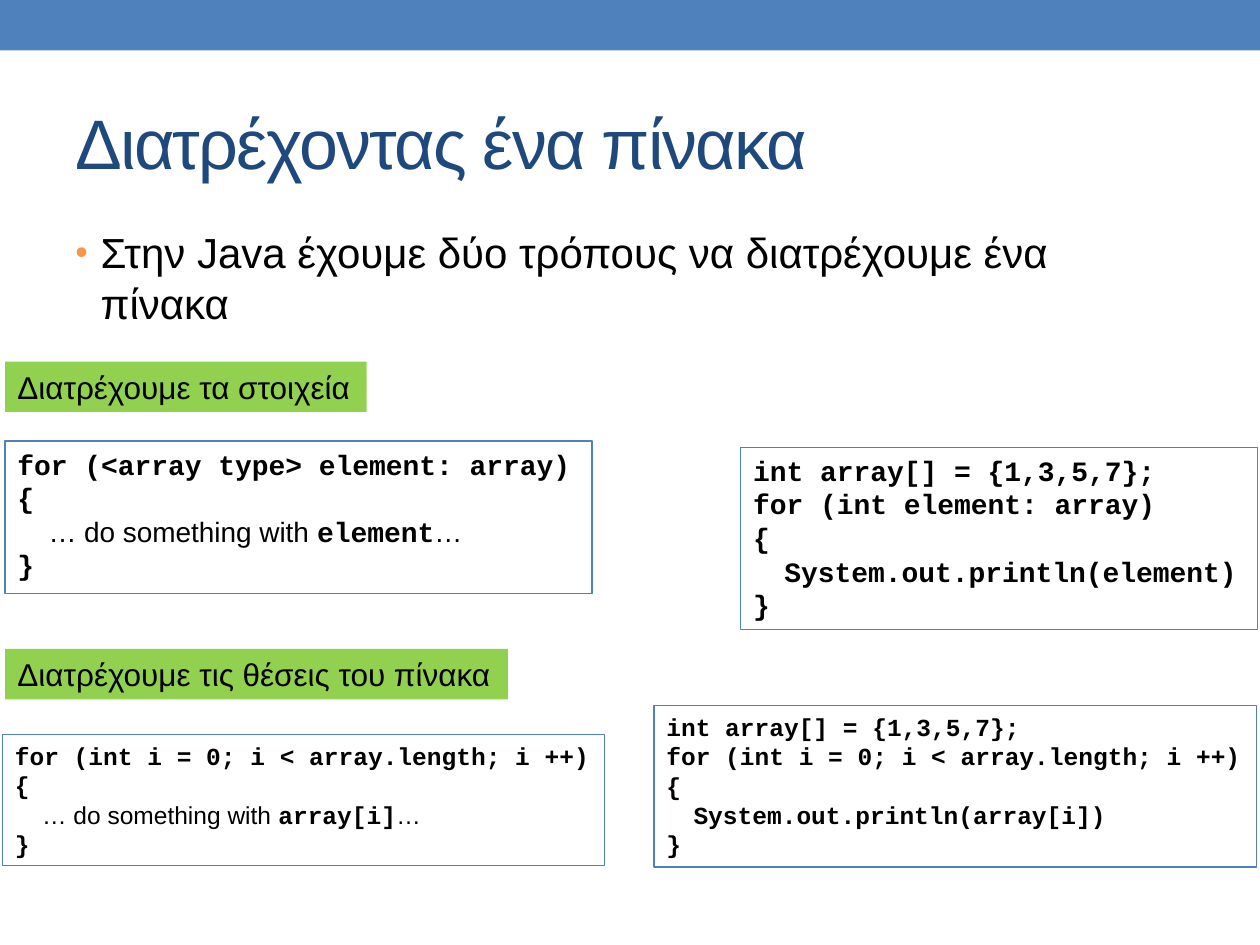
from dataclasses import dataclass

from lxml import etree
from pptx import Presentation
from pptx import util as u
from pptx.dml.color import RGBColor
from pptx.enum import shapes, text
from pptx.oxml.ns import qn
from pptx.shapes.autoshape import Shape
from pptx.slide import Slide

WIDTH, HEIGHT = u.Inches(10), u.Inches(7.5)
BLUE = RGBColor(0x4F, 0x81, 0xBD)
NAVY = RGBColor(0x1F, 0x49, 0x7D)
GREEN = RGBColor(0x92, 0xD0, 0x50)
BLACK = RGBColor(0, 0, 0)
BULLET_COLOR = "F79646"
PROSE, CODE = "Arial", "Courier New"
LABEL_HEIGHT = 5.33


@dataclass(frozen=True)
class Area:
    """A rectangle in percent of the slide's width and height."""
    left: float
    top: float
    width: float
    height: float

    def lengths(self) -> tuple[int, int, int, int]:
        shares = (self.left, self.top, self.width, self.height)
        return tuple(round(share * side / 100)
                     for share, side in zip(shares, (WIDTH, HEIGHT) * 2))


@dataclass(frozen=True)
class Line:
    """A line of code, which may stand inside prose."""
    code: str
    before: str = ""
    after: str = ""
    indented: bool = False


@dataclass(frozen=True)
class Listing:
    area: Area
    size: int
    head: tuple[str, ...]
    body: Line

    def lines(self) -> list[Line]:
        return [*map(Line, self.head), Line("{"), self.body, Line("}")]


@dataclass(frozen=True)
class Label:
    area: Area
    words: str


def do_something(target: str) -> Line:
    return Line(target, "… do something with ", "…", True)


def print_out(target: str) -> Line:
    return Line(f"System.out.println({target})", indented=True)


ARRAY = "int array[] = {1,3,5,7};"
INDEX_LOOP = "for (int i = 0; i < array.length; i ++)"
LISTINGS = (
    Listing(Area(0.4, 46.67, 46.6, 16.13), 16,
            ("for (<array type> element: array)",), do_something("element")),
    Listing(Area(0.2, 77.73, 47.8, 13.87), 14,
            (INDEX_LOOP,), do_something("array[i]")),
    Listing(Area(58.8, 47.33, 41, 19.33), 16,
            (ARRAY, "for (int element: array)"), print_out("element")),
    Listing(Area(51.9, 74.67, 47.8, 17.07), 14,
            (ARRAY, INDEX_LOOP), print_out("array[i]")),
)
LABELS = (
    Label(Area(0.4, 38.27, 28.7, LABEL_HEIGHT), "Διατρέχουμε τα στοιχεία"),
    Label(Area(0.4, 68.67, 39.9, LABEL_HEIGHT), "Διατρέχουμε τις θέσεις του πίνακα"),
)


def style(font: text.Font if hasattr(text, "Font") else object, name: str,
          size: float, color: RGBColor = BLACK, bold: bool = False) -> None:
    font.name, font.size, font.bold = name, u.Pt(size), bold
    font.color.rgb = color


def add_rectangle(slide: Slide, area: Area, fill: RGBColor | None = None,
                  line: RGBColor | None = None) -> Shape:
    shape = slide.shapes.add_shape(shapes.MSO_SHAPE.RECTANGLE, *area.lengths())
    shape.shadow.inherit = False
    if fill is None:
        shape.fill.background()
    else:
        shape.fill.solid()
        shape.fill.fore_color.rgb = fill
    if line is None:
        shape.line.fill.background()
    else:
        shape.line.color.rgb = line
        shape.line.width = u.Pt(0.75)
    frame = shape.text_frame
    frame.word_wrap = False
    frame.vertical_anchor = text.MSO_ANCHOR.TOP
    frame.paragraphs[0].alignment = text.PP_ALIGN.LEFT
    return shape


def add_label(slide: Slide, label: Label) -> None:
    frame = add_rectangle(slide, label.area, fill=GREEN).text_frame
    frame.auto_size = text.MSO_AUTO_SIZE.SHAPE_TO_FIT_TEXT
    paragraph = frame.paragraphs[0]
    paragraph.text = label.words
    style(paragraph.font, PROSE, 18)


def add_listing(slide: Slide, listing: Listing) -> None:
    frame = add_rectangle(slide, listing.area, line=BLUE).text_frame
    frame.auto_size = text.MSO_AUTO_SIZE.SHAPE_TO_FIT_TEXT
    for number, line in enumerate(listing.lines()):
        paragraph = frame.add_paragraph() if number else frame.paragraphs[0]
        paragraph.alignment = text.PP_ALIGN.LEFT
        style(paragraph.font, CODE, listing.size, bold=True)
        if line.indented:
            four_spaces = u.Pt(round(1.11 * listing.size, 2))
            paragraph._p.get_or_add_pPr().set("marL", str(four_spaces))
        for words, is_code in ((line.before, False), (line.code, True), (line.after, False)):
            if words:
                run = paragraph.add_run()
                run.text = words
                if not is_code:
                    run.font.name, run.font.bold = PROSE, False


def add_text(slide: Slide, area: Area, words: str, size: int, color: RGBColor,
             anchor: text.MSO_ANCHOR):
    frame = slide.shapes.add_textbox(*area.lengths()).text_frame
    frame.word_wrap = True
    frame.vertical_anchor = anchor
    paragraph = frame.paragraphs[0]
    paragraph.text = words
    style(paragraph.font, PROSE, size, color)
    return paragraph


def add_bullet(paragraph) -> None:
    """Hang the paragraph from a small orange dot."""
    properties = paragraph._p.get_or_add_pPr()
    indent = u.Inches(0.2)
    properties.set("marL", str(indent))
    properties.set("indent", str(-indent))
    color = etree.Element(qn("a:buClr"))
    etree.SubElement(color, qn("a:srgbClr"), val=BULLET_COLOR)
    size = etree.Element(qn("a:buSzPct"), val="85000")
    font = etree.Element(qn("a:buFont"), typeface=PROSE)
    character = etree.Element(qn("a:buChar"), char="•")
    defaults = properties.find(qn("a:defRPr"))
    for element in (color, size, font, character):
        defaults.addprevious(element)


def main() -> None:
    presentation = Presentation()
    presentation.slide_width, presentation.slide_height = WIDTH, HEIGHT
    slide = presentation.slides.add_slide(presentation.slide_layouts[6])

    add_rectangle(slide, Area(0, 0, 100, LABEL_HEIGHT), fill=BLUE)
    title = add_text(slide, Area(5, 7.73, 90, 14.4), "Διατρέχοντας ένα πίνακα",
                     40, NAVY, text.MSO_ANCHOR.MIDDLE)
    title.runs[0].font._element.set("spc", "-100")
    point = add_text(slide, Area(5, 23.33, 90, 11.07),
                     "Στην Java έχουμε δύο τρόπους να διατρέχουμε ένα πίνακα",
                     24, BLACK, text.MSO_ANCHOR.TOP)
    point.space_before = u.Pt(4.8)
    add_bullet(point)

    for listing in LISTINGS:
        add_listing(slide, listing)
    for label in LABELS:
        add_label(slide, label)
    presentation.save("out.pptx")


if __name__ == "__main__":
    main()
